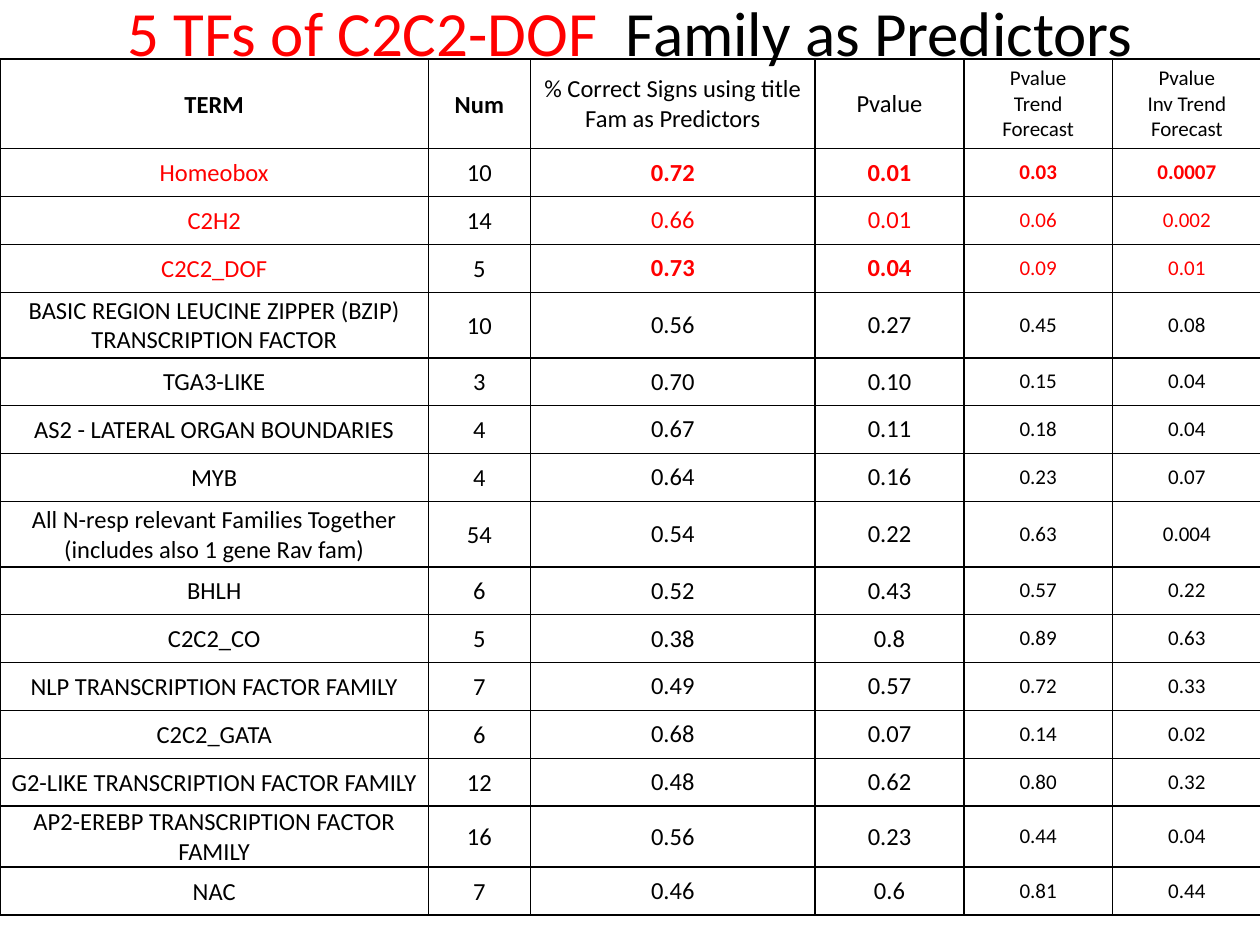
from lxml.etree import SubElement as Sub
from pptx import Presentation
from pptx.dml.color import RGBColor
from pptx.enum.text import MSO_ANCHOR as Anchor, MSO_AUTO_SIZE as Auto, PP_ALIGN as Align
from pptx.oxml.ns import qn
from pptx.util import Inches, Pt

FACE = "Calibri"
RED, BLACK = "FF0000", "000000"
WIDTHS = [3.4, 0.81, 2.26, 1.18, 1.18, 1.18]
HEAD_H, ROW_H, TALL_H = 0.67, 0.38, 0.52
SIZES = [14, 14, 14, 14, 12, 12]

HEADS = ["TERM", "Num", "% Correct Signs using title Fam as Predictors", "Pvalue",
         "Pvalue\nTrend\nForecast", "Pvalue\nInv Trend\nForecast"]
ROWS = [
    ["Homeobox", "10", "0.72", "0.01", "0.03", "0.0007"],
    ["C2H2", "14", "0.66", "0.01", "0.06", "0.002"],
    ["C2C2_DOF", "5", "0.73", "0.04", "0.09", "0.01"],
    ["BASIC REGION LEUCINE ZIPPER (BZIP) TRANSCRIPTION FACTOR",
     "10", "0.56", "0.27", "0.45", "0.08"],
    ["TGA3-LIKE", "3", "0.70", "0.10", "0.15", "0.04"],
    ["AS2 - LATERAL ORGAN BOUNDARIES", "4", "0.67", "0.11", "0.18", "0.04"],
    ["MYB", "4", "0.64", "0.16", "0.23", "0.07"],
    ["All N-resp relevant Families Together (includes also 1 gene Rav fam)",
     "54", "0.54", "0.22", "0.63", "0.004"],
    ["BHLH", "6", "0.52", "0.43", "0.57", "0.22"],
    ["C2C2_CO", "5", "0.38", "0.8", "0.89", "0.63"],
    ["NLP TRANSCRIPTION FACTOR FAMILY", "7", "0.49", "0.57", "0.72", "0.33"],
    ["C2C2_GATA", "6", "0.68", "0.07", "0.14", "0.02"],
    ["G2-LIKE TRANSCRIPTION FACTOR FAMILY", "12", "0.48", "0.62", "0.80", "0.32"],
    ["AP2-EREBP TRANSCRIPTION FACTOR FAMILY", "16", "0.56", "0.23", "0.44", "0.04"],
    ["NAC", "7", "0.46", "0.6", "0.81", "0.44"],
]
TALL = {4, 8}      # table rows with two-line terms
RED_ROWS = {1, 2, 3}
BOLD = {0: {0, 1}, 1: {2, 3, 4, 5}, 3: {2, 3}}   # table row: bold columns


def tint(font, color):
    font.color.rgb = RGBColor.from_string(color)


def add_title(slide):
    title = slide.shapes.title
    title.left, title.top = Inches(0.5), Inches(-0.38)
    title.width, title.height = Inches(9), Inches(1.25)
    frame = title.text_frame
    frame.auto_size = Auto.NONE
    frame.vertical_anchor = Anchor.MIDDLE
    para = frame.paragraphs[0]
    para.alignment = Align.CENTER
    para.font.name, para.font.size = FACE, Pt(36)
    for text, color in [("5 TFs of C2C2-DOF  ", RED), ("Family as Predictors", BLACK)]:
        run = para.add_run()
        run.text = text
        tint(run.font, color)


def add_edges(cell):
    props = cell._tc.get_or_add_tcPr()
    for side in ("lnL", "lnR", "lnT", "lnB"):
        line = Sub(props, qn("a:" + side), w=str(Pt(1)))
        Sub(Sub(line, qn("a:solidFill")), qn("a:srgbClr"), val=BLACK)


def fill_cell(cell, text, size, color, bold, tight):
    add_edges(cell)
    cell.fill.background()
    cell.vertical_anchor = Anchor.MIDDLE
    if tight:
        cell.margin_left = cell.margin_right = cell.margin_top = Inches(0.01)
        cell.margin_bottom = 0
    cell.text_frame.text = text
    for para in cell.text_frame.paragraphs:
        para.alignment = Align.CENTER
        font = para.font
        font.name, font.size, font.bold = FACE, Pt(size), bold
        tint(font, color)


def add_grid(slide):
    data = [HEADS] + ROWS
    highs = [HEAD_H] + [TALL_H if r in TALL else ROW_H for r in range(1, len(data))]
    grid = slide.shapes.add_table(len(data), len(WIDTHS), 0, Inches(0.47),
                                  Inches(10), Inches(sum(highs))).table
    grid.first_row = grid.horz_banding = False
    for col, width in zip(grid.columns, WIDTHS):
        col.width = Inches(width)
    for r, (row, high) in enumerate(zip(data, highs)):
        grid.rows[r].height = Inches(high)
        for c, text in enumerate(row):
            color = RED if r in RED_ROWS and c != 1 else BLACK
            fill_cell(grid.cell(r, c), text, SIZES[c], color,
                      bold=c in BOLD.get(r, ()), tight=c < 2)


def main():
    deck = Presentation()
    deck.slide_width, deck.slide_height = Inches(10), Inches(7.5)
    slide = deck.slides.add_slide(deck.slide_layouts[5])  # title only
    add_title(slide)
    add_grid(slide)
    deck.save("out.pptx")


if __name__ == "__main__":
    main()
